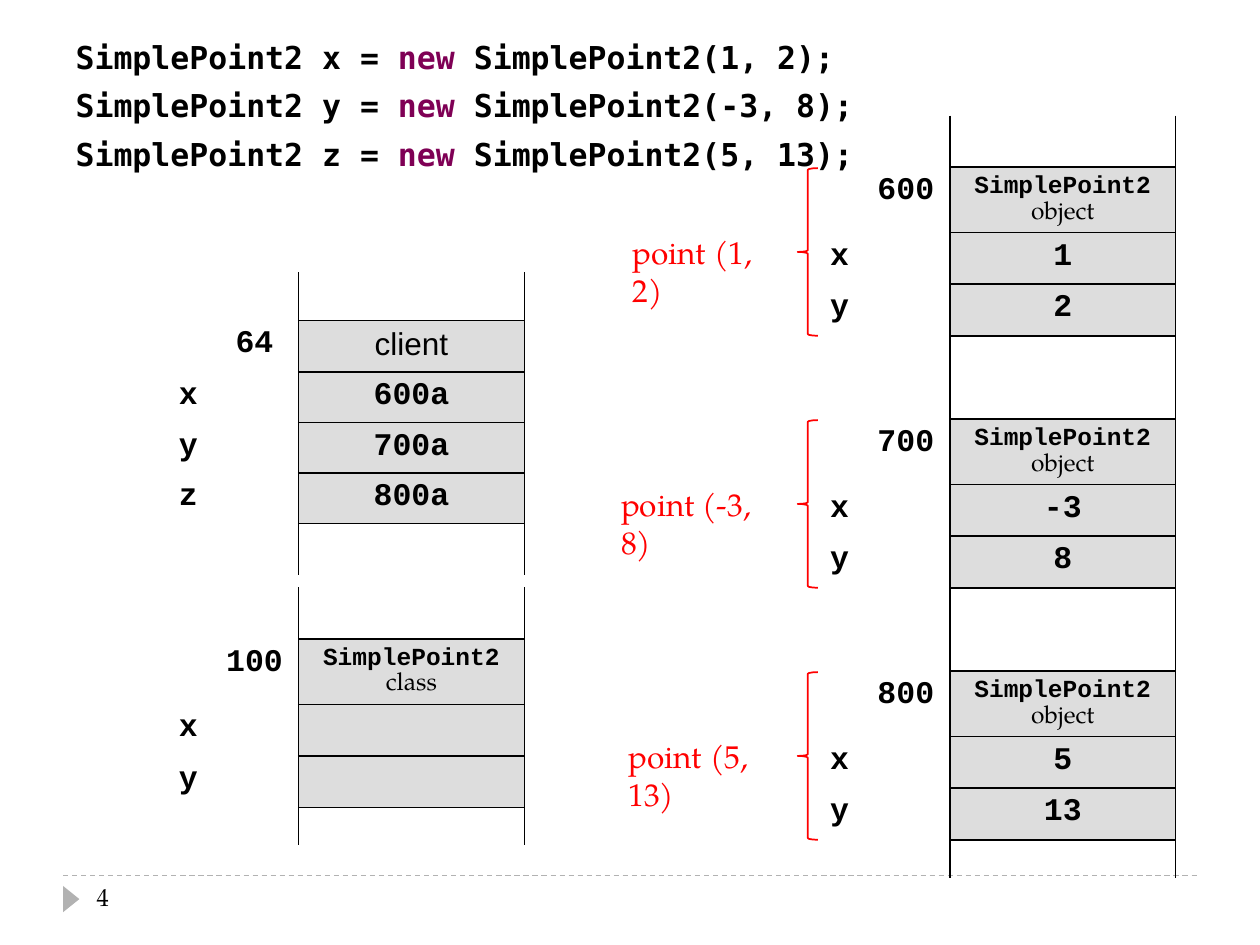
from pptx import Presentation
from pptx import util as u
from pptx.dml import color
from pptx.enum import dml, shapes, text
from pptx.oxml import ns, xmlchemy

Cm = u.Cm
COLORS = {"black": "000000", "keyword": "7F0055", "cell": "DDDDDD",
          "note": "FF0000", "footer": "B2B2B2"}
MONO, CODE, SERIF, SANS = "Courier New", "DejaVu Sans Mono", "TeX Gyre Pagella", "Arial"
COLUMNS = (2.97, 1.78, 4.55)
OBJECT_ROWS = (1.04, 1.32, 1.04, 1.04, 0.76)
CLIENT_ROWS = (0.97, 1.04, 0.97, 0.97, 0.97, 1.04)


def rgb(name):
    return color.RGBColor.from_string(COLORS[name])


def add_run(paragraph, content, font=MONO, size=18, bold=False, tint="black"):
    run = paragraph.add_run()
    run.text = content
    run.font.name, run.font.size, run.font.bold = font, u.Pt(size), bold
    run.font.color.rgb = rgb(tint)


def add_child(parent, tag, index=None, **attributes):
    element = xmlchemy.OxmlElement(tag)
    for key, value in attributes.items():
        element.set(key, str(value))
    parent.insert(len(parent) if index is None else index, element)
    return element


def set_borders(cell, sides):
    """Draw black one-point borders on the given sides and none on the others."""
    properties = cell._tc.get_or_add_tcPr()
    for index, side in enumerate("LRTB"):
        line = add_child(properties, f"a:ln{side}", index, w=u.Pt(1))
        if side in sides:
            fill = add_child(line, "a:solidFill")
            add_child(fill, "a:srgbClr", val=COLORS["black"])
        else:
            add_child(line, "a:noFill")


def fill_cell(cell, runs, align):
    paragraph = cell.text_frame.paragraphs[0]
    paragraph.alignment = align
    for run in runs:
        add_run(paragraph, *run)
    if not runs:  # keep empty cells from stretching their row
        add_child(paragraph._p, "a:endParaRPr", sz=1000)


def add_memory_block(slide, left, top, heights, address, title, fields,
                     merge_addresses=False):
    """Memory diagram: names, addresses and a bordered column of values."""
    frame = slide.shapes.add_table(len(heights), len(COLUMNS), Cm(left), Cm(top),
                                   Cm(sum(COLUMNS)), Cm(sum(heights)))
    table = frame.table
    table.first_row = table.horz_banding = False
    for column, width in zip(table.columns, COLUMNS):
        column.width = Cm(width)
    for row, height in zip(table.rows, heights):
        row.height = Cm(height)

    rows = [([], [], []), ([], [(address, MONO, 18, True)], title)]
    for name, value in fields:
        rows.append(([(name, MONO, 18, True)], [],
                     [(value, MONO, 18, True)] if value else []))
    rows.append(([], [], []))

    last = len(rows) - 1
    if merge_addresses:
        table.cell(2, 1).merge(table.cell(last - 1, 1))
    aligns = (text.PP_ALIGN.RIGHT, text.PP_ALIGN.CENTER, text.PP_ALIGN.CENTER)
    for r, contents in enumerate(rows):
        value_sides = {0: "LRB", last: "LRT"}.get(r, "LRTB")
        for c, sides in enumerate(("", "R", value_sides)):
            cell = table.cell(r, c)
            fill_cell(cell, contents[c], aligns[c])
            if r == 1:  # room for a two-line title
                cell.margin_bottom = 0
            if c == 2 and 0 < r < last:
                cell.fill.solid()
                cell.fill.fore_color.rgb = rgb("cell")
            else:
                cell.fill.background()
            set_borders(cell, sides)


def add_point_note(slide, left, top, width, content):
    """Red label with a brace, beside the object block that starts at top."""
    box = slide.shapes.add_textbox(Cm(left), Cm(top + 2.24), Cm(width), Cm(1.02))
    box.text_frame.word_wrap = True
    add_run(box.text_frame.paragraphs[0], content, SERIF, tint="note")
    brace = slide.shapes.add_shape(shapes.MSO_SHAPE.LEFT_BRACE, Cm(16.08),
                                   Cm(top + 1.06), Cm(0.41), Cm(3.38))
    brace.shadow.inherit = False
    brace.fill.background()
    brace.line.color.rgb = rgb("note")
    brace.line.width = u.Pt(1)


def add_code(slide, left, top, width, height, calls):
    """Constructor calls in the body placeholder."""
    body = slide.placeholders[1]
    body.left, body.top, body.width, body.height = map(Cm, (left, top, width, height))
    frame = body.text_frame
    frame.auto_size = text.MSO_AUTO_SIZE.NONE
    for index, (name, arguments) in enumerate(calls):
        paragraph = frame.add_paragraph() if index else frame.paragraphs[0]
        paragraph.space_before = u.Pt(6)
        properties = paragraph._p.get_or_add_pPr()
        properties.set("marL", str(Cm(0.76)))
        properties.set("indent", str(-Cm(0.76)))
        add_child(properties, "a:buNone")
        add_run(paragraph, f"SimplePoint2 {name} = ", CODE, bold=True)
        add_run(paragraph, "new ", CODE, bold=True, tint="keyword")
        add_run(paragraph, f"SimplePoint2({arguments});", CODE, bold=True)


def add_footer(slide, left, top, width, number):
    """Dashed rule, triangle marker and slide number."""
    rule = slide.shapes.add_connector(shapes.MSO_CONNECTOR.STRAIGHT, Cm(left), Cm(top),
                                      Cm(left + width), Cm(top))
    rule.line.color.rgb = rgb("footer")
    rule.line.width = u.Pt(0.75)
    rule.line.dash_style = dml.MSO_LINE.DASH
    add_child(rule._element.find(ns.qn("p:spPr")), "a:effectLst")

    marker = slide.shapes.add_shape(shapes.MSO_SHAPE.ISOSCELES_TRIANGLE, Cm(left - 0.1),
                                    Cm(top + 0.31), Cm(0.53), Cm(0.33))
    marker.rotation = 90
    marker.shadow.inherit = False
    marker.fill.solid()
    marker.fill.fore_color.rgb = rgb("footer")
    marker.line.fill.background()

    box = slide.shapes.add_textbox(Cm(left + 0.43), Cm(top), Cm(5.51), Cm(1.02))
    box.text_frame.word_wrap = True
    add_run(box.text_frame.paragraphs[0], number, SERIF, 14)


def class_title(kind):
    return [("SimplePoint2 ", MONO, 14, True), (kind, SERIF, 14)]


def main():
    presentation = Presentation()
    presentation.slide_width, presentation.slide_height = Cm(25.4), Cm(19.05)
    slide = presentation.slides.add_slide(presentation.slide_layouts[1])
    title = slide.shapes.title._element
    title.getparent().remove(title)

    add_footer(slide, 1.27, 17.65, 22.86, "4")
    add_code(slide, 1.27, 0.64, 22.86, 16.46,
             [("x", "1, 2"), ("y", "-3, 8"), ("z", "5, 13")])

    # Client variables and the class
    add_memory_block(slide, 1.27, 5.49, CLIENT_ROWS, "64", [("client", SANS)],
                     [("x", "600a"), ("y", "700a"), ("z", "800a")],
                     merge_addresses=True)
    add_memory_block(slide, 1.27, 11.84, OBJECT_ROWS, "100", class_title("class"),
                     [("x", ""), ("y", "")])

    # Objects, one below the other
    objects = [("600", "1", "2", 12.5, 3.58), ("700", "-3", "8", 12.27, 3.81),
               ("800", "5", "13", 12.42, 3.73)]
    tops = [2.33 + 5.08 * index for index in range(len(objects))]
    for top, (address, x, y, _, _) in zip(tops, objects):
        add_memory_block(slide, 14.4, top, OBJECT_ROWS, address, class_title("object"),
                         [("x", x), ("y", y)])
    for top, (_, x, y, left, width) in zip(tops, objects):
        add_point_note(slide, left, top, width, f"point ({x}, {y})")

    presentation.save("out.pptx")


if __name__ == "__main__":
    main()
